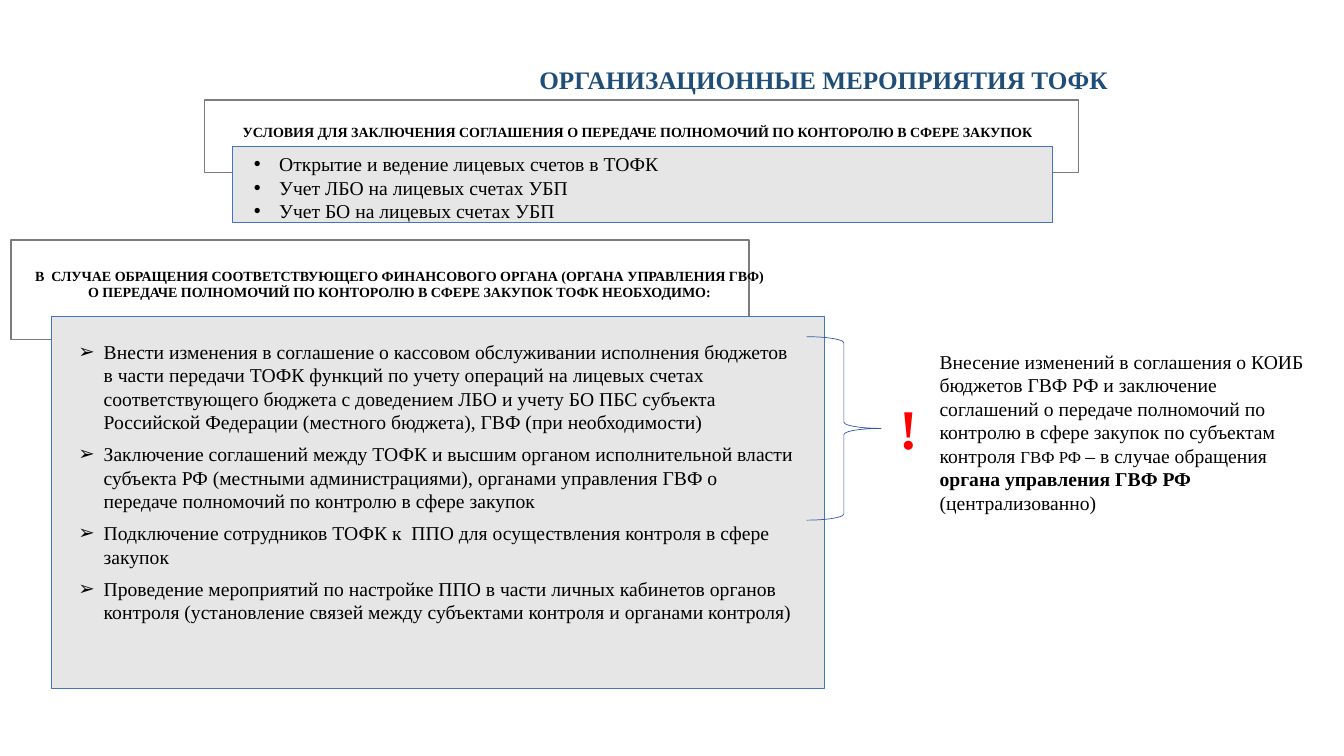
from dataclasses import dataclass

from lxml import etree
from pptx import Presentation
from pptx.dml.color import RGBColor
from pptx.enum.shapes import MSO_SHAPE
from pptx.enum.text import MSO_AUTO_SIZE, PP_ALIGN
from pptx.oxml.ns import qn
from pptx.util import Inches, Pt

RECTANGLE = MSO_SHAPE.RECTANGLE
BRACE = MSO_SHAPE.RIGHT_BRACE
GROW = MSO_AUTO_SIZE.SHAPE_TO_FIT_TEXT
LEFT, CENTER = PP_ALIGN.LEFT, PP_ALIGN.CENTER

TITLE = "ОРГАНИЗАЦИОННЫЕ МЕРОПРИЯТИЯ ТОФК"
CONDITIONS_HEADING = (
    "УСЛОВИЯ ДЛЯ ЗАКЛЮЧЕНИЯ СОГЛАШЕНИЯ О ПЕРЕДАЧЕ ПОЛНОМОЧИЙ "
    "ПО КОНТОРОЛЮ В СФЕРЕ ЗАКУПОК")
CONDITIONS = [
    "Открытие и ведение лицевых счетов в ТОФК",
    "Учет ЛБО на лицевых счетах УБП",
    "Учет БО на лицевых счетах УБП",
]
ACTIONS_HEADING = (
    "В  СЛУЧАЕ ОБРАЩЕНИЯ СООТВЕТСТВУЮЩЕГО ФИНАНСОВОГО ОРГАНА "
    "(ОРГАНА УПРАВЛЕНИЯ ГВФ) О ПЕРЕДАЧЕ ПОЛНОМОЧИЙ ПО КОНТОРОЛЮ "
    "В СФЕРЕ ЗАКУПОК ТОФК НЕОБХОДИМО:")
ACTIONS = [
    "Внести изменения в соглашение о кассовом обслуживании исполнения "
    "бюджетов в части передачи ТОФК функций по учету операций на лицевых "
    "счетах соответствующего бюджета с доведением ЛБО и учету БО ПБС субъекта "
    "Российской Федерации (местного бюджета), ГВФ (при необходимости)",
    "Заключение соглашений между ТОФК и высшим органом исполнительной власти "
    "субъекта РФ (местными администрациями), органами управления ГВФ о "
    "передаче полномочий по контролю в сфере закупок",
    "Подключение сотрудников ТОФК к  ППО для осуществления контроля в сфере "
    "закупок",
    "Проведение мероприятий по настройке ППО в части личных кабинетов органов "
    "контроля (установление связей между субъектами контроля и органами "
    "контроля)",
]


@dataclass(frozen=True)
class Theme:
    font: str = "Times New Roman"
    title: str = "1F4E79"
    ink: str = "000000"
    alert: str = "FF0000"
    paper: str = "FFFFFF"
    panel: str = "E7E6E6"
    frame_line: str = "7C7C7C"
    panel_line: str = "4472C4"
    brace_line: str = "335CA7"
    title_size: int = 18
    heading_size: int = 10
    body_size: int = 14
    small_size: int = 12
    alert_size: int = 40


THEME = Theme()

# A run of the note: text, size, bold
NOTE = [
    ("Внесение изменений в соглашения о КОИБ бюджетов ГВФ РФ и заключение "
     "соглашений о передаче полномочий по контролю в сфере закупок по "
     "субъектам контроля ", THEME.body_size, False),
    ("ГВФ РФ ", THEME.small_size, False),
    ("– в случае обращения ", THEME.body_size, False),
    ("органа управления ГВФ РФ ", THEME.body_size, True),
    ("(централизованно)", THEME.body_size, False),
]

# Frame and panel of each block: left, top, width, height
BLOCKS = [
    ((0.11, 2.38, 7.32, 0.99), (0.51, 3.14, 7.67, 3.69)),
    ((2.03, 0.99, 8.67, 0.72), (2.31, 1.45, 8.13, 0.76)),
]
BRACE_PLACE = (8, 3.34, 0.74, 1.82)


def place(box):
    return [Inches(length) for length in box]


def add_outline(slide, kind, box, line, width, fill=None):
    shape = slide.shapes.add_shape(kind, *place(box))
    shape.shadow.inherit = False
    if fill:
        shape.fill.solid()
        shape.fill.fore_color.rgb = RGBColor.from_string(fill)
    else:
        shape.fill.background()
    shape.line.color.rgb = RGBColor.from_string(line)
    shape.line.width = Pt(width)


def add_bullet(paragraph, mark):
    properties = paragraph._p.get_or_add_pPr()
    properties.set("marL", str(Inches(0.25)))
    properties.set("indent", str(-Inches(0.25)))
    etree.SubElement(properties, qn("a:buFont")).set("typeface", "Arial")
    etree.SubElement(properties, qn("a:buChar")).set("char", mark)


def add_text(slide, box, paragraphs, size=THEME.body_size, color=THEME.ink,
             bold=False, align=LEFT, bullet=None, gap=0):
    """Each paragraph is a string or a list of (text, size, bold) runs."""
    frame = slide.shapes.add_textbox(*place(box)).text_frame
    frame.word_wrap = True
    frame.auto_size = GROW
    for index, content in enumerate(paragraphs):
        paragraph = frame.add_paragraph() if index else frame.paragraphs[0]
        paragraph.alignment = align
        if index and gap:
            paragraph.space_before = Pt(gap)
        if bullet:
            add_bullet(paragraph, bullet)
        runs = [(content, size, bold)] if isinstance(content, str) else content
        for words, run_size, run_bold in runs:
            run = paragraph.add_run()
            run.text = words
            run.font.name = THEME.font
            run.font.size = Pt(run_size)
            run.font.bold = run_bold
            run.font.color.rgb = RGBColor.from_string(color)


def main():
    deck = Presentation()
    deck.slide_width, deck.slide_height = Inches(13.33), Inches(7.5)
    slide = deck.slides.add_slide(deck.slide_layouts[6])

    for frame, panel in BLOCKS:
        add_outline(slide, RECTANGLE, frame, THEME.frame_line, 1, THEME.paper)
        add_outline(slide, RECTANGLE, panel, THEME.panel_line, 0.5, THEME.panel)

    add_text(slide, (5.05, 0.59, 6.24, 0.4), [TITLE], size=THEME.title_size,
             color=THEME.title, bold=True, align=CENTER)
    heading = dict(size=THEME.heading_size, bold=True, align=CENTER)
    add_text(slide, (2.03, 1.18, 8.58, 0.27), [CONDITIONS_HEADING], **heading)
    add_text(slide, (2.42, 1.46, 7.21, 0.81), CONDITIONS, bullet="•")
    add_text(slide, (0.24, 2.6, 7.44, 0.44), [ACTIONS_HEADING], **heading)
    add_text(slide, (0.68, 3.32, 7.32, 3.67), ACTIONS, bullet="➢", gap=6)

    add_outline(slide, BRACE, BRACE_PLACE, THEME.brace_line, 0.5)
    add_text(slide, (9.22, 3.42, 3.95, 1.75), [NOTE])
    add_text(slide, (8.74, 3.85, 0.55, 0.79), ["!"], size=THEME.alert_size,
             color=THEME.alert, bold=True, align=CENTER)
    deck.save("out.pptx")


if __name__ == "__main__":
    main()
